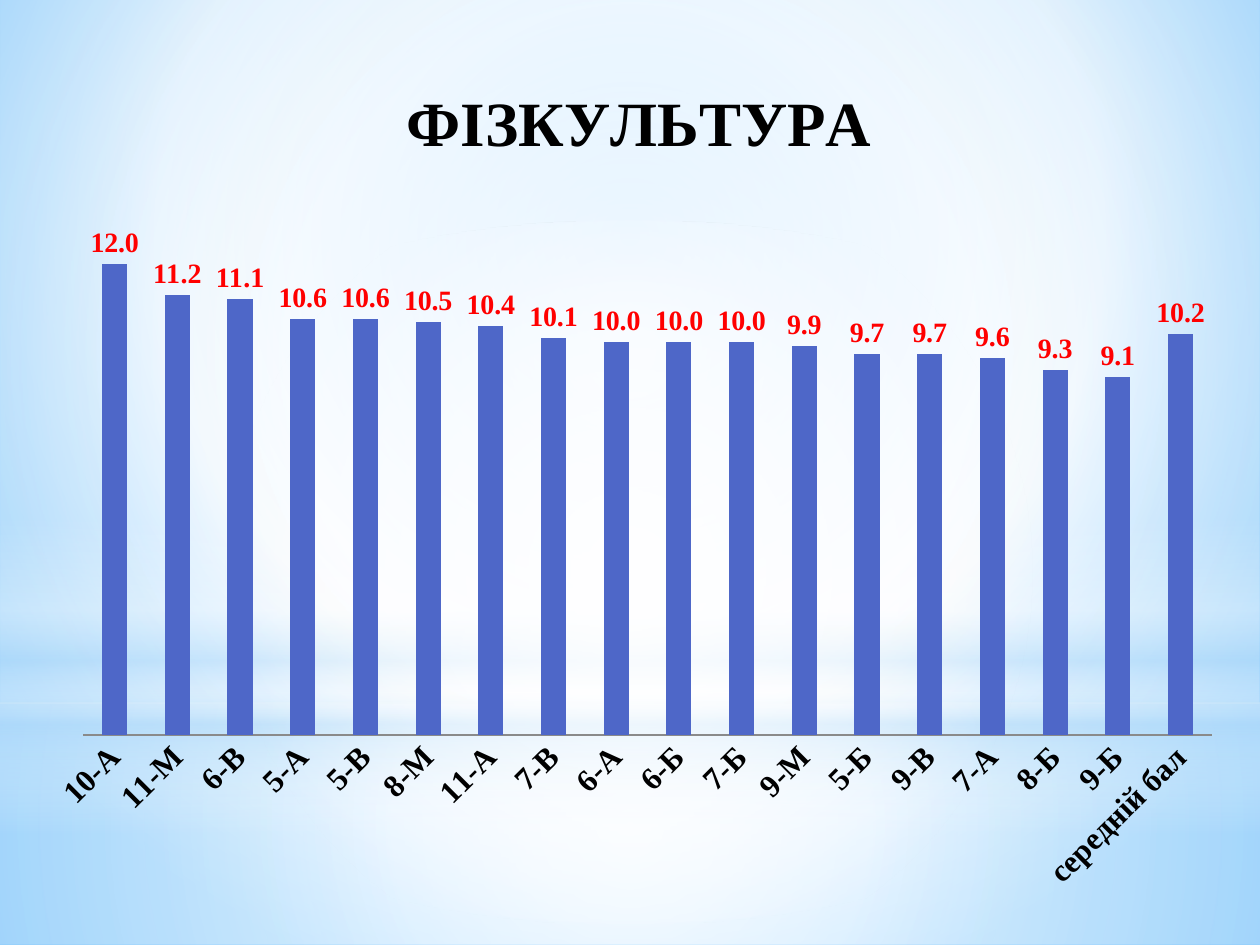
from lxml import etree
from pptx import Presentation
from pptx.chart.data import CategoryChartData
from pptx.dml.color import RGBColor
from pptx.enum import chart as ch, shapes
from pptx.oxml import ns
from pptx.util import Inches, Pt

THEME = {
    "font": "Times New Roman", "base_font": "Karla",
    "text": "000000", "bar": "4E67C8", "value": "FF0000", "axis": "8A8A8A",
    "title_pt": 36, "category_pt": 18, "value_pt": 16, "base_pt": 10,
    "white": "FFFFFF", "haze": "B4DCFA", "glow": "9ED5FF", "sky": "5BB9FF",
}
W, H = THEME["white"], THEME["haze"]
CENTRE = (50, 50, 50, 50)

BACKGROUND = [(0, THEME["glow"], 100), (60, W, 100), (100, THEME["sky"], 100)]
BACKGROUND_FOCUS = (20, 10, 20, 60)

RECT, OVAL = shapes.MSO_SHAPE.RECTANGLE, shapes.MSO_SHAPE.OVAL
LAYERS = [
    (RECT, (0, 5.58, 10, 1.92), [(0, W, 91), (37, W, 76), (100, H, 79)], CENTRE),
    (RECT, (0, 0, 10, 5.58), [(0, W, 89), (48, W, 62), (100, H, 79)], CENTRE),
    (RECT, (0, 4.12, 10, 2.5),
     [(0, W, 0), (29, W, 30), (45, H, 40), (55, W, 26), (65, H, 60), (100, W, 0)], None),
    (OVAL, (0, 1.75, 10, 5.58), [(0, W, 100), (56, W, 0)], CENTRE),
]

TITLE = "ФІЗКУЛЬТУРА"
SCORES = [
    ("10-А", 12), ("11-М", 11.2), ("6-В", 11.1), ("5-А", 10.6), ("5-В", 10.6),
    ("8-М", 10.5), ("11-А", 10.4), ("7-В", 10.1), ("6-А", 10), ("6-Б", 10),
    ("7-Б", 10), ("9-М", 9.9), ("5-Б", 9.7), ("9-В", 9.7), ("7-А", 9.6),
    ("8-Б", 9.3), ("9-Б", 9.1), ("середній бал", 10.2),
]
CHART_BOX = (0.28, 0.29, 9.53, 6.93)
TITLE_LAYOUT = {"x": 0.3, "y": 0.04}
PLOT_LAYOUT = {"x": 0.04, "y": 0.17, "w": 0.94, "h": 0.63}


def add(parent, tag, **attrs):
    return etree.SubElement(parent, ns.qn(tag), {k: str(v) for k, v in attrs.items()})


def set_gradient(fill, root, stops, focus):
    fill.solid()
    solid = next(root.iter(ns.qn("a:solidFill")))
    grad = etree.Element(ns.qn("a:gradFill"), rotWithShape="1")
    stop_list = add(grad, "a:gsLst")
    for pos, color, alpha in stops:
        clr = add(add(stop_list, "a:gs", pos=pos * 1000), "a:srgbClr", val=color)
        if alpha < 100:
            add(clr, "a:alpha", val=alpha * 1000)
    if focus:
        sides = {side: v * 1000 for side, v in zip("ltrb", focus)}
        add(add(grad, "a:path", path="circle"), "a:fillToRect", **sides)
    else:
        add(grad, "a:lin", ang=90 * 60000, scaled=0)
    solid.getparent().replace(solid, grad)


def set_layout(parent, index, box, inner=False):
    for old in parent.findall(ns.qn("c:layout")):
        parent.remove(old)
    layout = etree.Element(ns.qn("c:layout"))
    manual = add(layout, "c:manualLayout")
    if inner:
        add(manual, "c:layoutTarget", val="inner")
    for key in "xy":
        add(manual, f"c:{key}Mode", val="edge")
    for key, value in box.items():
        add(manual, f"c:{key}", val=value)
    parent.insert(index, layout)


def format_font(font, size, color=THEME["text"], name=THEME["font"], bold=True):
    font.size, font.name, font.bold = Pt(size), name, bold
    font.color.rgb = RGBColor.from_string(color)


def write(tf, content, **style):
    r = tf.paragraphs[0].add_run()
    r.text = content
    format_font(r.font, **style)


def add_layer(s, kind, box, stops, focus):
    sp = s.shapes.add_shape(kind, *map(Inches, box))
    sp.shadow.inherit = False
    sp.line.fill.background()
    set_gradient(sp.fill, sp._element.spPr, stops, focus)


def add_scores(s):
    data = CategoryChartData(number_format="0.0")
    data.categories = [name for name, _ in SCORES]
    data.add_series("Series 1", [score for _, score in SCORES])
    chart = s.shapes.add_chart(
        ch.XL_CHART_TYPE.COLUMN_CLUSTERED, *map(Inches, CHART_BOX), data).chart
    format_font(chart.font, THEME["base_pt"], name=THEME["base_font"], bold=False)
    chart.has_legend = False
    chart.has_title = True
    write(chart.chart_title.text_frame, TITLE, size=THEME["title_pt"])
    chart.chart_title.include_in_layout = False
    set_layout(chart.chart_title._element, 1, TITLE_LAYOUT)

    plot = chart.plots[0]
    set_layout(plot._element.getparent(), 0, PLOT_LAYOUT, inner=True)
    plot.gap_width, plot.vary_by_categories = 150, False
    fill = plot.series[0].format.fill
    fill.solid()
    fill.fore_color.rgb = RGBColor.from_string(THEME["bar"])
    plot.has_data_labels = True
    labels = plot.data_labels
    labels.show_value = True
    labels.number_format, labels.number_format_is_linked = "0.0", False
    labels.position = ch.XL_LABEL_POSITION.OUTSIDE_END
    format_font(labels.font, THEME["value_pt"], THEME["value"])

    cat, val = chart.category_axis, chart.value_axis
    cat.major_tick_mark = ch.XL_TICK_MARK.NONE
    cat.format.line.color.rgb = RGBColor.from_string(THEME["axis"])
    format_font(cat.tick_labels.font, THEME["category_pt"])
    cat._element.find(ns.qn("c:txPr")).find(ns.qn("a:bodyPr")).set("rot", str(-45 * 60000))
    val.minimum_scale, val.maximum_scale = 0, 14
    val.has_major_gridlines = False
    val.visible = False


def main():
    prs = Presentation()
    prs.slide_width, prs.slide_height = Inches(10), Inches(7.5)
    s = prs.slides.add_slide(prs.slide_layouts[6])
    set_gradient(s.background.fill, s._element, BACKGROUND, BACKGROUND_FOCUS)
    for layer in LAYERS:
        add_layer(s, *layer)
    add_scores(s)
    prs.save("out.pptx")


if __name__ == "__main__":
    main()
